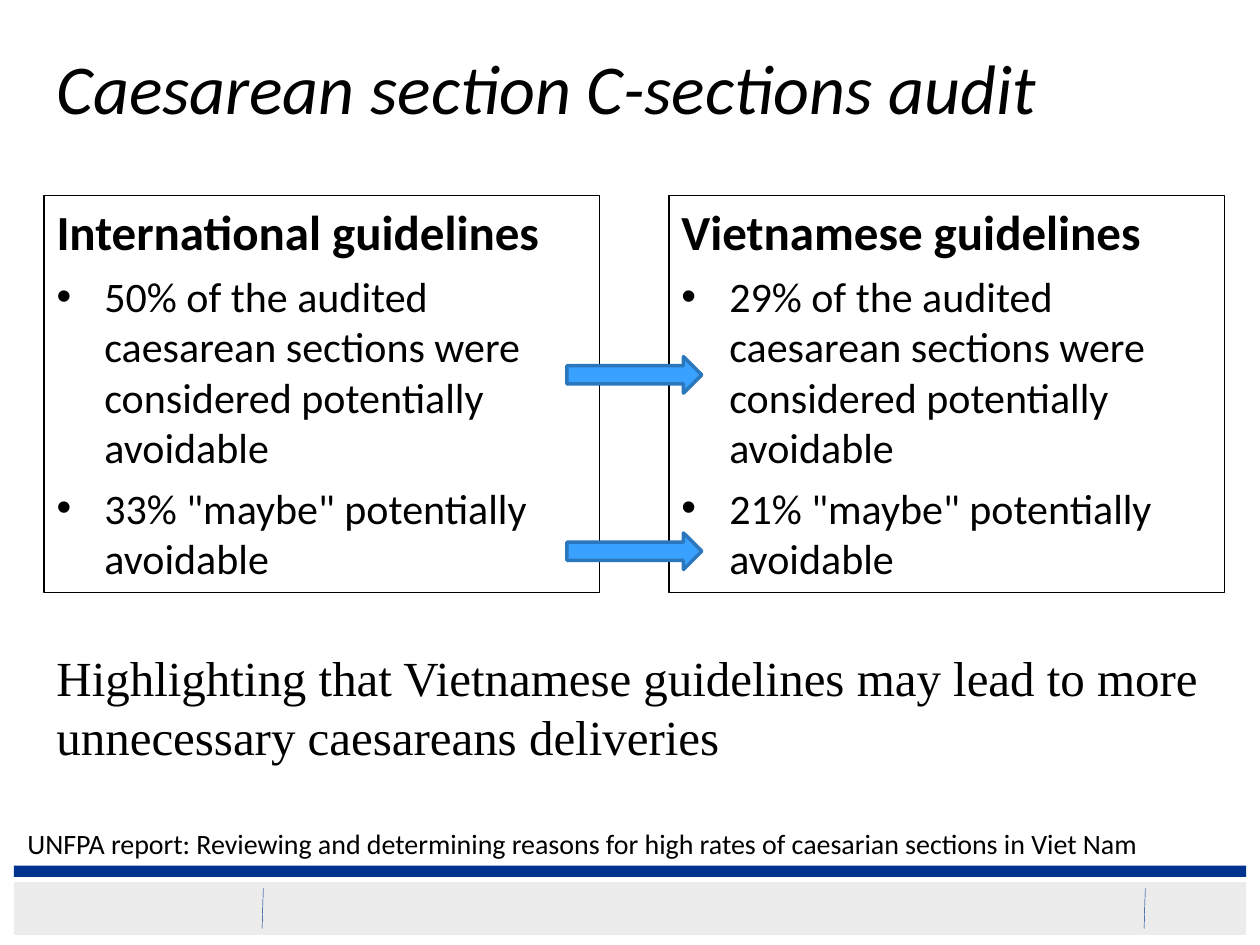
from lxml import etree
from pptx import Presentation
from pptx import util as u
from pptx.dml.color import RGBColor
from pptx.enum import shapes, text
from pptx.oxml.ns import qn

WIDTH, HEIGHT = 10, 7.5
COLORS = {"ink": "000000", "band": "ECECEC", "navy": "00338D",
          "arrow": "39A1FF", "arrow_edge": "2A77BD"}
MARGIN = 0.035 * WIDTH
PANEL_WIDTH, PANEL_PITCH = 4.41, 4.96
INDENT = 0.38

GUIDELINES = [
    ("International guidelines",
     ["50% of the audited caesarean sections were considered potentially avoidable",
      '33% "maybe" potentially avoidable']),
    ("Vietnamese guidelines",
     ["29% of the audited caesarean sections were considered potentially avoidable",
      '21% "maybe" potentially avoidable']),
]


def color(name):
    return RGBColor.from_string(COLORS[name])


def inches(box):
    return [u.Inches(value) for value in box]


def set_font(para, size, name="Calibri", bold=False, italic=False):
    font = para.font
    font.size, font.name = u.Pt(size), name
    font.bold, font.italic = bold, italic
    font.color.rgb = color("ink")


def add_block(page, kind, box, fill=None, line=None, weight=0.75):
    block = page.shapes.add_shape(kind, *inches(box))
    block.shadow.inherit = False
    if fill:
        block.fill.solid()
        block.fill.fore_color.rgb = color(fill)
    else:
        block.fill.background()
    if line:
        block.line.color.rgb = color(line)
        block.line.width = u.Pt(weight)
    else:
        block.line.fill.background()
    return block


def add_text(page, box, words, size, anchor=text.MSO_ANCHOR.TOP, **style):
    frame = page.shapes.add_textbox(*inches(box)).text_frame
    frame.word_wrap = True
    frame.vertical_anchor = anchor
    para = frame.paragraphs[0]
    para.text = words
    set_font(para, size, **style)


def add_bullet(para):
    props = para._p.get_or_add_pPr()
    props.set("marL", str(u.Inches(INDENT)))
    props.set("indent", str(-u.Inches(INDENT)))
    etree.SubElement(props, qn("a:buFont"), typeface="Arial")
    etree.SubElement(props, qn("a:buChar"), char="•")


def add_footer(page, box):
    """Draw the navy rule, the grey band and its two slanted dividers."""
    left, top, width, height = box
    rect = shapes.MSO_SHAPE.RECTANGLE
    band_top = top + 0.13
    add_block(page, rect, (left, band_top, width, height - 0.13), "band")
    add_block(page, rect, (left, top, width, 0.09), "navy")
    for offset in (1.98, 8.98):
        x = left + offset
        divider = page.shapes.add_connector(
            shapes.MSO_CONNECTOR.STRAIGHT,
            *inches((x, band_top + 0.05, x - 0.01, band_top + 0.37)))
        divider.line.color.rgb = color("navy")
        divider.line.width = u.Pt(0.25)
        etree.SubElement(divider._element.spPr, qn("a:effectLst"))


def add_panel(page, box, heading, findings):
    panel = add_block(page, shapes.MSO_SHAPE.RECTANGLE, box, line="ink")
    frame = panel.text_frame
    frame.word_wrap = True
    frame.vertical_anchor = text.MSO_ANCHOR.TOP
    para = frame.paragraphs[0]
    para.text = heading
    para.alignment = text.PP_ALIGN.LEFT
    set_font(para, 28, bold=True)
    for finding in findings:
        para = frame.add_paragraph()
        para.text = finding
        para.alignment = text.PP_ALIGN.LEFT
        para.space_before = u.Pt(5.8)
        add_bullet(para)
        set_font(para, 24)


def add_comparison(page, box):
    """Place the two guideline panels and the arrows that bridge them."""
    left, top, width, height = box
    for column, (heading, findings) in enumerate(GUIDELINES):
        add_panel(page, (left + column * PANEL_PITCH, top, PANEL_WIDTH, height),
                  heading, findings)
    arrow_width = 1.07
    arrow_left = left + (width - arrow_width) / 2
    for offset in (1.28, 2.68):
        add_block(page, shapes.MSO_SHAPE.RIGHT_ARROW,
                  (arrow_left, top + offset, arrow_width, 0.29),
                  "arrow", "arrow_edge", 2)


def main():
    deck = Presentation()
    deck.slide_width, deck.slide_height = inches((WIDTH, HEIGHT))
    page = deck.slides.add_slide(deck.slide_layouts[6])
    content_width = PANEL_PITCH + PANEL_WIDTH

    add_footer(page, (0.11, 6.87, 9.78, 0.55))
    add_text(page, (MARGIN, 0.29, 9.29, 0.79), "Caesarean section C-sections audit",
             40, text.MSO_ANCHOR.MIDDLE, italic=True)
    add_text(page, (0.12, 6.51, 9.76, 0.37),
             "UNFPA report: Reviewing and determining reasons for high rates of "
             "caesarian sections in Viet Nam", 16)
    add_comparison(page, (MARGIN, 1.55, content_width, 3.15))
    add_text(page, (MARGIN, 5.09, content_width, 1.04),
             "Highlighting that Vietnamese guidelines may lead to more "
             "unnecessary caesareans deliveries", 28, name="Times New Roman")
    deck.save("out.pptx")


if __name__ == "__main__":
    main()
